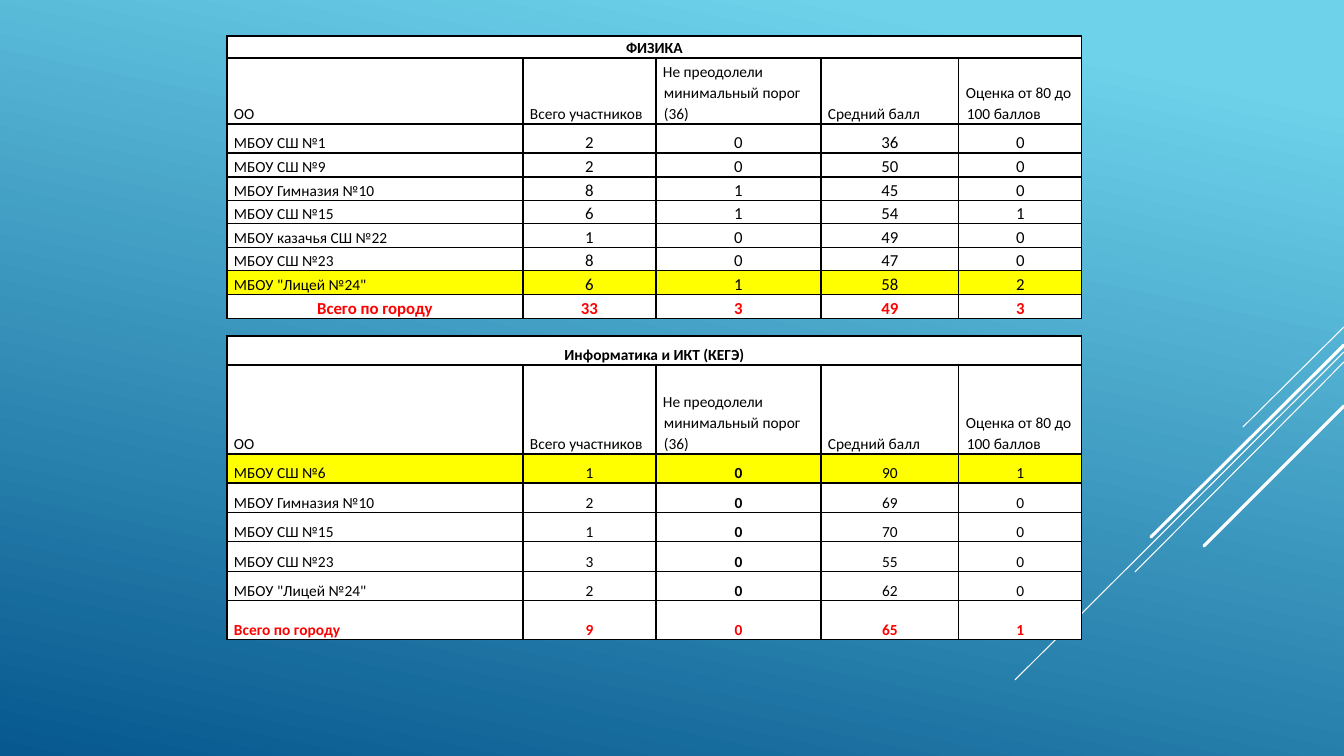
import pptx
import pptx.util
import pptx.dml.color
import pptx.enum.shapes
import pptx.enum.text
import pptx.oxml
import pptx.oxml.ns
import lxml.etree

RGB = pptx.dml.color.RGBColor
WHITE = RGB(0xFF, 0xFF, 0xFF)
BLACK = RGB(0, 0, 0)
RED = RGB(0xFF, 0, 0)
YELLOW = RGB(0xFF, 0xFF, 0)
SKY = RGB(0x6E, 0xD2, 0xEB)
NAVY = RGB(0x06, 0x58, 0x8E)

ALIGN = pptx.enum.text.PP_ALIGN
QN = pptx.oxml.ns.qn
Pt = pptx.util.Pt


def px(n):
    """Turn px, 100.8 to the inch, into EMU."""
    return pptx.util.Emu(round(n * 914400 / 100.8))


def frame(cell):
    """Give a cell thin black borders on all four sides."""
    props = cell._tc.get_or_add_tcPr()
    for side in ("lnL", "lnR", "lnT", "lnB"):
        edge = lxml.etree.SubElement(props, QN("a:" + side), w=str(Pt(1)))
        fill = lxml.etree.SubElement(edge, QN("a:solidFill"))
        lxml.etree.SubElement(fill, QN("a:srgbClr"), val=str(BLACK))


deck = pptx.Presentation()
deck.slide_width = px(1344)
deck.slide_height = px(756)
slide = deck.slides.add_slide(deck.slide_layouts[6])

back = slide.background.fill
back.gradient()
back.gradient_angle = 258
for stop, color, place in zip(back.gradient_stops, (SKY, NAVY), (0.1, 1)):
    stop.color.rgb = color
    stop.position = place

# Diagonal rays: start y on the right edge, end x, end y, width in points
RAYS = [
    (327, 1243, 427, 0.75),
    (352, 1015, 680, 0.75),
    (362, 1135, 572, 0.75),
    (345, 1151, 537, 2.25),
    (406, 1204, 546, 2.25),
]
for top, x, y, width in RAYS:
    ray = slide.shapes.add_connector(
        pptx.enum.shapes.MSO_CONNECTOR.STRAIGHT, px(1344), px(top), px(x), px(y))
    ray.line.color.rgb = WHITE
    ray.line.width = Pt(width)
    props = ray._element.spPr
    if width > 1:
        props.find(QN("a:ln")).set("cap", "rnd")
    lxml.etree.SubElement(props, QN("a:effectLst"))

HEAD = ["ОО", "Всего участников", "Не преодолели минимальный порог (36)",
        "Средний балл", "Оценка от 80 до 100 баллов"]
TOTAL = "Всего по городу"
COLS = [296, 133, 165, 138, 123]

PHYSICS = [
    ["ФИЗИКА"],
    HEAD,
    ["МБОУ СШ №1", 2, 0, 36, 0],
    ["МБОУ СШ №9", 2, 0, 50, 0],
    ["МБОУ Гимназия №10", 8, 1, 45, 0],
    ["МБОУ СШ №15", 6, 1, 54, 1],
    ["МБОУ казачья СШ №22", 1, 0, 49, 0],
    ["МБОУ СШ №23", 8, 0, 47, 0],
    ['МБОУ "Лицей №24"', 6, 1, 58, 2],
    [TOTAL, 33, 3, 49, 3],
]
COMPUTING = [
    ["Информатика и ИКТ (КЕГЭ)"],
    HEAD,
    ["МБОУ СШ №6", 1, 0, 90, 1],
    ["МБОУ Гимназия №10", 2, 0, 69, 0],
    ["МБОУ СШ №15", 1, 0, 70, 0],
    ["МБОУ СШ №23", 3, 0, 55, 0],
    ['МБОУ "Лицей №24"', 2, 0, 62, 0],
    [TOTAL, 9, 0, 65, 1],
]

# Top, rows, row heights, yellow row, number size, bold column, total's alignment
TABLES = [
    (36, PHYSICS, [22, 66, 29, 24, 24, 23, 24, 23, 24, 24],
     8, 12, None, ALIGN.CENTER),
    (336, COMPUTING, [29, 89, 29, 30, 29, 30, 29, 39],
     2, 11, 2, ALIGN.LEFT),
]
for top, rows, highs, mark, size, strong, side in TABLES:
    table = slide.shapes.add_table(
        len(rows), len(COLS), px(227), px(top), px(sum(COLS)), px(sum(highs))).table
    table.first_row = False
    table.horz_banding = False
    for col, wide in zip(table.columns, COLS):
        col.width = px(wide)
    for row, high in zip(table.rows, highs):
        row.height = px(high)
    table.cell(0, 0).merge(table.cell(0, len(COLS) - 1))

    last = len(rows) - 1
    for r, row in enumerate(rows):
        for c in range(len(COLS)):
            cell = table.cell(r, c)
            frame(cell)
            cell.fill.solid()
            cell.fill.fore_color.rgb = YELLOW if r == mark else WHITE
            if c >= len(row):
                continue
            cell.margin_left = cell.margin_right = px(7)
            cell.margin_top = cell.margin_bottom = 0
            cell.vertical_anchor = pptx.enum.text.MSO_ANCHOR.BOTTOM
            cell.text = str(row[c])

            para = cell.text_frame.paragraphs[0]
            para.line_spacing = 1.12
            props = para._p.get_or_add_pPr()
            props.set("marL", str(px(1)))
            props.set("indent", str(-px(1)))
            number = r > 1 and c > 0
            if r == last and c == 0:
                para.alignment = side
            else:
                para.alignment = ALIGN.CENTER if r == 0 or number else ALIGN.LEFT
            font = para.font
            font.name = "Calibri"
            font.size = Pt(size if number or r == last else 11)
            font.bold = r in (0, last) or (number and c == strong)
            font.color.rgb = RED if r == last else BLACK

deck.save("out.pptx")
